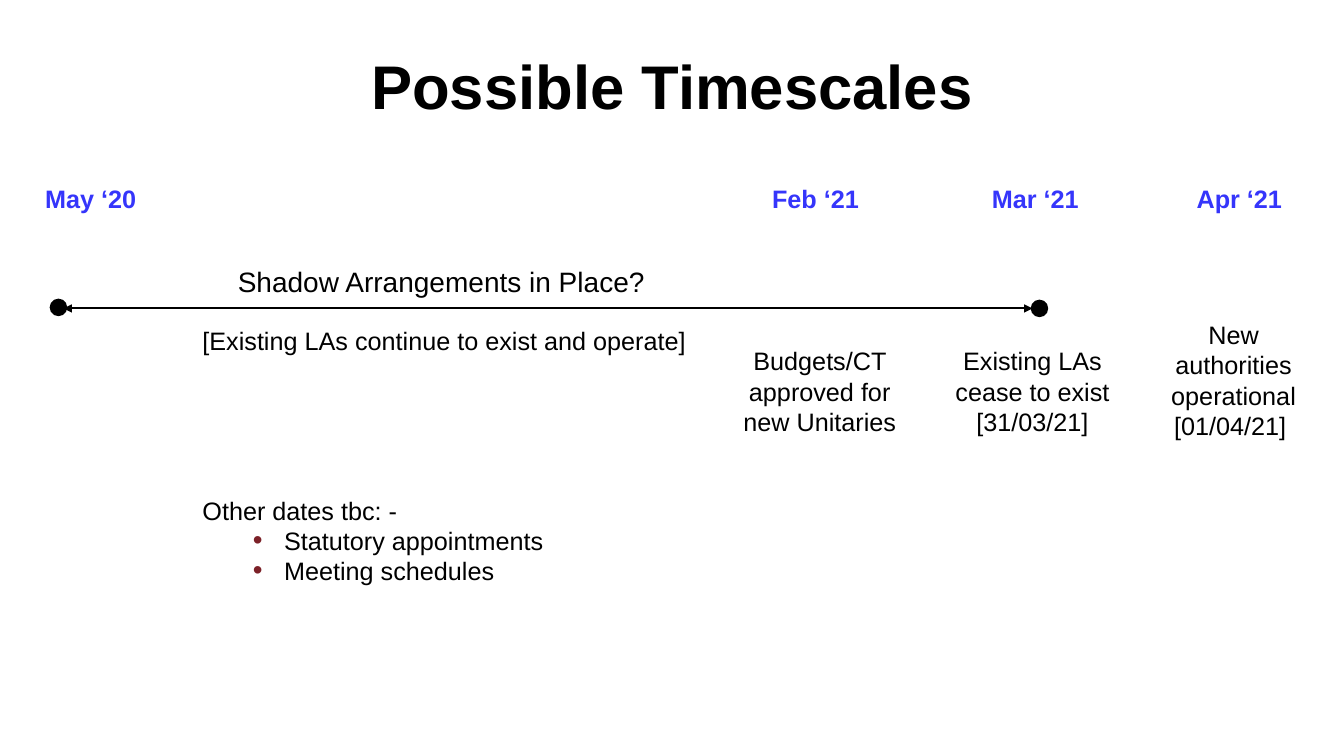
from lxml import etree
from pptx import Presentation
from pptx.dml.color import RGBColor
from pptx.enum.shapes import MSO_CONNECTOR, MSO_SHAPE
from pptx.enum.text import MSO_ANCHOR, MSO_AUTO_SIZE, PP_ALIGN
from pptx.oxml.ns import qn
from pptx.util import Inches, Pt

LEFT, CENTER = PP_ALIGN.LEFT, PP_ALIGN.CENTER
BOTTOM = MSO_ANCHOR.BOTTOM
NO_FIT, GROW = MSO_AUTO_SIZE.NONE, MSO_AUTO_SIZE.SHAPE_TO_FIT_TEXT
STRAIGHT, OVAL = MSO_CONNECTOR.STRAIGHT, MSO_SHAPE.OVAL

BLACK = RGBColor(0x00, 0x00, 0x00)
WHITE = RGBColor(0xFF, 0xFF, 0xFF)
DATE_BLUE = RGBColor(0x35, 0x35, 0xFB)
BULLET_RED = RGBColor(0x7C, 0x21, 0x28)
FONT = "Arial"

DATES = ["May ‘20", "Feb ‘21", "Mar ‘21", "Apr ‘21"]
DATE_TABS = [7.21, 9.39, 11.42]
DOT_SIZE = 0.16

# text, (left, top, width, height), size, alignment
LABELS = [
    ("New authorities operational [01/04/21] ", (11.37, 3.12, 1.73, 1.31), 18, CENTER),
    ("Shadow Arrangements in Place?", (2.26, 2.57, 4.35, 0.44), 20, LEFT),
    ("[Existing LAs continue to exist and operate] ", (1.84, 3.18, 5.2, 0.4), 18, CENTER),
    ("Budgets/CT approved for new Unitaries", (7.19, 3.38, 1.88, 1.01), 18, CENTER),
    ("Existing LAs cease to exist [31/03/21]", (9.3, 3.38, 1.88, 1.01), 18, CENTER),
]


def write(para, text, size=18, color=BLACK, bold=False, align=LEFT):
    para.alignment = align
    span = para.add_run()
    span.text = text
    span.font.name = FONT
    span.font.size = Pt(size)
    span.font.bold = bold
    span.font.color.rgb = color


def add_box(slide, place):
    box = slide.shapes.add_textbox(*map(Inches, place))
    box.text_frame.word_wrap = True
    box.text_frame.auto_size = GROW
    return box.text_frame


def add_title(slide, text):
    title = slide.shapes.title
    title.left, title.top = Inches(0.92), Inches(0.24)
    title.width, title.height = Inches(11.5), Inches(1.03)
    frame = title.text_frame
    frame.auto_size = NO_FIT
    frame.vertical_anchor = BOTTOM
    para = frame.paragraphs[0]
    para.line_spacing = 0.9
    write(para, text, size=44, bold=True, align=CENTER)


def add_dates(slide):
    para = add_box(slide, (0.35, 1.77, 12.63, 0.4)).paragraphs[0]
    tabs = etree.SubElement(para._p.get_or_add_pPr(), qn("a:tabLst"))
    for position in DATE_TABS:
        etree.SubElement(tabs, qn("a:tab"), pos=str(Inches(position)), algn="l")
    write(para, "\t".join(DATES), color=DATE_BLUE, bold=True)


def add_arrow(slide, left, right, top):
    arrow = slide.shapes.add_connector(
        STRAIGHT, Inches(left), Inches(top), Inches(right), Inches(top))
    arrow.line.color.rgb = BLACK
    arrow.line.width = Pt(1.5)
    line = arrow.line._get_or_add_ln()
    for end in ("a:headEnd", "a:tailEnd"):
        etree.SubElement(line, qn(end), type="triangle")
    etree.SubElement(arrow._element.spPr, qn("a:effectLst"))


def add_dot(slide, left, top):
    dot = slide.shapes.add_shape(
        OVAL, Inches(left), Inches(top), Inches(DOT_SIZE), Inches(DOT_SIZE))
    dot.shadow.inherit = False
    dot.fill.solid()
    dot.fill.fore_color.rgb = BLACK
    dot.line.color.rgb = BLACK
    dot.line.width = Pt(1)


def set_bullet(para):
    para.level = 1
    props = para._p.get_or_add_pPr()
    props.set("marL", str(Inches(0.81)))
    props.set("indent", str(Inches(-0.31)))
    color = etree.SubElement(props, qn("a:buClr"))
    etree.SubElement(color, qn("a:srgbClr"), val=str(BULLET_RED))
    etree.SubElement(props, qn("a:buSzPct"), val="110000")
    etree.SubElement(props, qn("a:buFont"), typeface=FONT)
    etree.SubElement(props, qn("a:buChar"), char="•")


def add_other_dates(slide):
    frame = add_box(slide, (1.91, 4.86, 3.67, 1.01))
    write(frame.paragraphs[0], "Other dates tbc: -")
    for item in ("Statutory appointments", "Meeting schedules"):
        para = frame.add_paragraph()
        set_bullet(para)
        write(para, item)


def main():
    deck = Presentation()
    deck.slide_width, deck.slide_height = Inches(13.33), Inches(7.5)
    page = deck.slides.add_slide(deck.slide_layouts[5])
    page.background.fill.solid()
    page.background.fill.fore_color.rgb = WHITE

    add_title(page, "Possible Timescales")

    # Timeline
    add_dates(page)
    add_arrow(page, 0.63, 10.24, 3.06)
    add_dot(page, 0.5, 2.97)
    add_dot(page, 10.23, 2.98)

    # Labels around the timeline
    for text, place, size, align in LABELS:
        write(add_box(page, place).paragraphs[0], text, size=size, align=align)

    # Dates still to be confirmed
    add_other_dates(page)

    deck.save("out.pptx")


if __name__ == "__main__":
    main()
